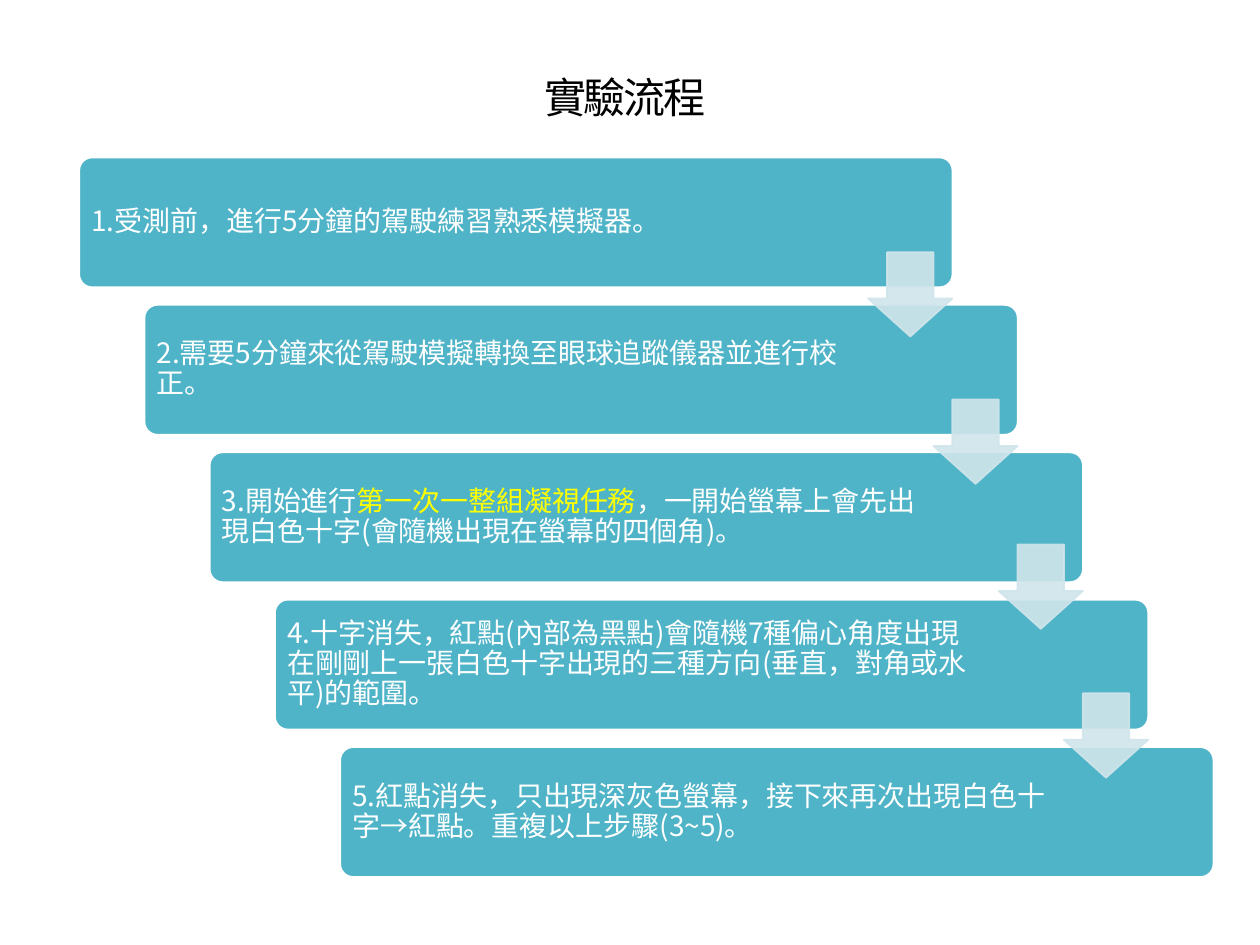
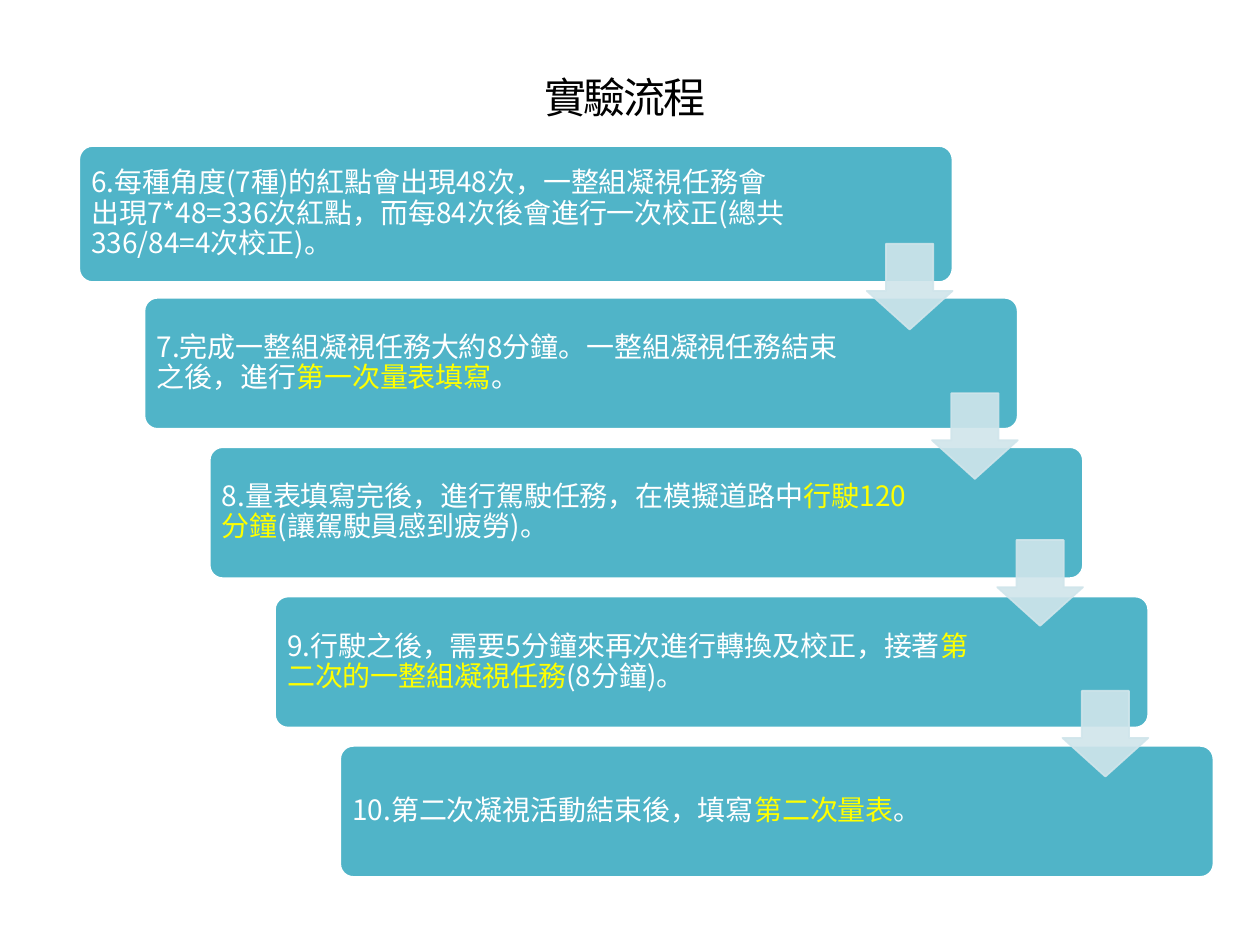
"""Build two slides that show an experiment procedure as descending steps."""
from lxml import etree
from pptx import Presentation
from pptx.dml.color import RGBColor
from pptx.enum.shapes import MSO_SHAPE
from pptx.enum.text import MSO_ANCHOR, PP_ALIGN
from pptx.oxml.ns import qn
from pptx.util import Pt

ROUNDED = MSO_SHAPE.ROUNDED_RECTANGLE
DOWN_ARROW = MSO_SHAPE.DOWN_ARROW
TOP, MIDDLE = MSO_ANCHOR.TOP, MSO_ANCHOR.MIDDLE
LEFT, CENTER = PP_ALIGN.LEFT, PP_ALIGN.CENTER

WHITE = RGBColor(0xFF, 0xFF, 0xFF)
BLACK = RGBColor(0x00, 0x00, 0x00)
YELLOW = RGBColor(0xFF, 0xFF, 0x00)
TEAL = RGBColor(0x50, 0xB4, 0xC8)
PALE = RGBColor(0xD0, 0xE5, 0xEB)
FONT = "Noto Sans CJK SC"

TITLE = "實驗流程"
STEP_LEFT, STEP_SHIFT, STEP_WIDTH = 45.3, 37.28, 499
TEXT_MARGIN, TEXT_WIDTH = 2.2, 408.7
ARROW_DROPS = (17, 17, 15.6, 16.4)

FIRST_STEPS = [
    [("1.受測前，進行5分鐘的駕駛練習熟悉模擬器。", WHITE)],
    [("2.需要5分鐘來從駕駛模擬轉換至眼球追蹤儀器並進行校正。", WHITE)],
    [("3.開始進行", WHITE), ("第一次一整組凝視任務", YELLOW),
     ("，一開始螢幕上會先出現白色十字(會隨機出現在螢幕的四個角)。", WHITE)],
    [("4.十字消失，紅點(內部為黑點)會隨機7種偏心角度出現在剛剛上一張白色十字"
      "出現的三種方向(垂直，對角或水平)的範圍。", WHITE)],
    [("5.紅點消失，只出現深灰色螢幕，接下來再次出現白色十字→紅點。"
      "重複以上步驟(3~5)。", WHITE)],
]
LAST_STEPS = [
    [("6.每種角度(7種)的紅點會出現48次，一整組凝視任務會出現7*48=336次紅點，"
      "而每84次後會進行一次校正(總共336/84=4次校正)。", WHITE)],
    [("7.完成一整組凝視任務大約8分鐘。一整組凝視任務結束之後，進行", WHITE),
     ("第一次量表填寫", YELLOW), ("。", WHITE)],
    [("8.量表填寫完後，進行駕駛任務，在模擬道路中", WHITE),
     ("行駛120分鐘", YELLOW), ("(讓駕駛員感到疲勞)。", WHITE)],
    [("9.行駛之後，需要5分鐘來再次進行轉換及校正，接著", WHITE),
     ("第二次的一整組凝視任務", YELLOW), ("(8分鐘)。", WHITE)],
    [("10.第二次凝視活動結束後，填寫", WHITE), ("第二次量表", YELLOW),
     ("。", WHITE)],
]


def add_text(page, place, spans, size, align, anchor, inset, spacing=0, after=0):
    """Add a one-paragraph text box made of (text, colour) spans."""
    box = page.shapes.add_textbox(*map(Pt, place))
    frame = box.text_frame
    frame.word_wrap = True
    frame.vertical_anchor = anchor
    frame.margin_left = frame.margin_right = Pt(inset)
    frame.margin_top = frame.margin_bottom = Pt(min(inset, 4.8))
    para = frame.paragraphs[0]
    para.alignment = align
    para.line_spacing = 0.9
    para.space_after = Pt(after)
    for text, colour in spans:
        span = para.add_run()
        span.text = text
        span.font.size = Pt(size)
        span.font.name = FONT
        span.font.color.rgb = colour
        properties = span.font._element
        etree.SubElement(properties, qn("a:ea"), typeface=FONT)
        if spacing:
            properties.set("spc", str(round(spacing * 100)))


def add_panel(page, kind, place, fill, line, adjustments):
    """Add a filled preset shape with a one-point outline."""
    panel = page.shapes.add_shape(kind, *map(Pt, place))
    panel.shadow.inherit = False
    panel.fill.solid()
    panel.fill.fore_color.rgb = fill
    panel.line.color.rgb = line
    panel.line.width = Pt(1)
    for index, value in enumerate(adjustments):
        panel.adjustments[index] = value
    return panel


def add_step(page, left, middle, height, spans):
    """Add a rounded band and its text, centred on a height."""
    top = middle - height / 2
    add_panel(page, ROUNDED, (left, top, STEP_WIDTH, height), TEAL, WHITE, [0.1])
    place = (left + TEXT_MARGIN, top + TEXT_MARGIN, TEXT_WIDTH,
             height - 2 * TEXT_MARGIN)
    add_text(page, place, spans, 16, LEFT, MIDDLE, 4.8, after=5.6)


def add_arrow(page, right, top, size):
    """Add a slightly transparent down arrow that ends at a right edge."""
    arrow = add_panel(page, DOWN_ARROW, (right - size, top, size, size),
                      PALE, PALE, [0.55, 0.45])
    for colour in arrow._element.spPr.iter(qn("a:srgbClr")):
        etree.SubElement(colour, qn("a:alpha"), val="90000")


def add_procedure(deck, steps, first_middle, pitch, heights, arrow_size):
    """Add a slide with the title, a staircase of steps and its arrows."""
    page = deck.slides.add_slide(deck.slide_layouts[6])
    add_text(page, (38.9, 39.6, 636.5, 130.3), [(TITLE, BLACK)], 24,
             CENTER, TOP, 7.2, spacing=-1.2)
    places = [(STEP_LEFT + index * STEP_SHIFT, first_middle + index * pitch)
              for index in range(len(steps))]
    for (left, middle), height, spans in zip(places, heights, steps):
        add_step(page, left, middle, height, spans)
    for (left, middle), drop in zip(places, ARROW_DROPS):
        add_arrow(page, left + STEP_WIDTH, middle + drop, arrow_size)


def main():
    """Build and save the deck."""
    deck = Presentation()
    deck.slide_width, deck.slide_height = Pt(720), Pt(540)
    add_procedure(deck, FIRST_STEPS, 127.1, 84.24, [74.2] * 5, 48.2)
    add_procedure(deck, LAST_STEPS, 122.3, 85.35, [77.8] + [74.9] * 4, 49)
    deck.save("out.pptx")


if __name__ == "__main__":
    main()
